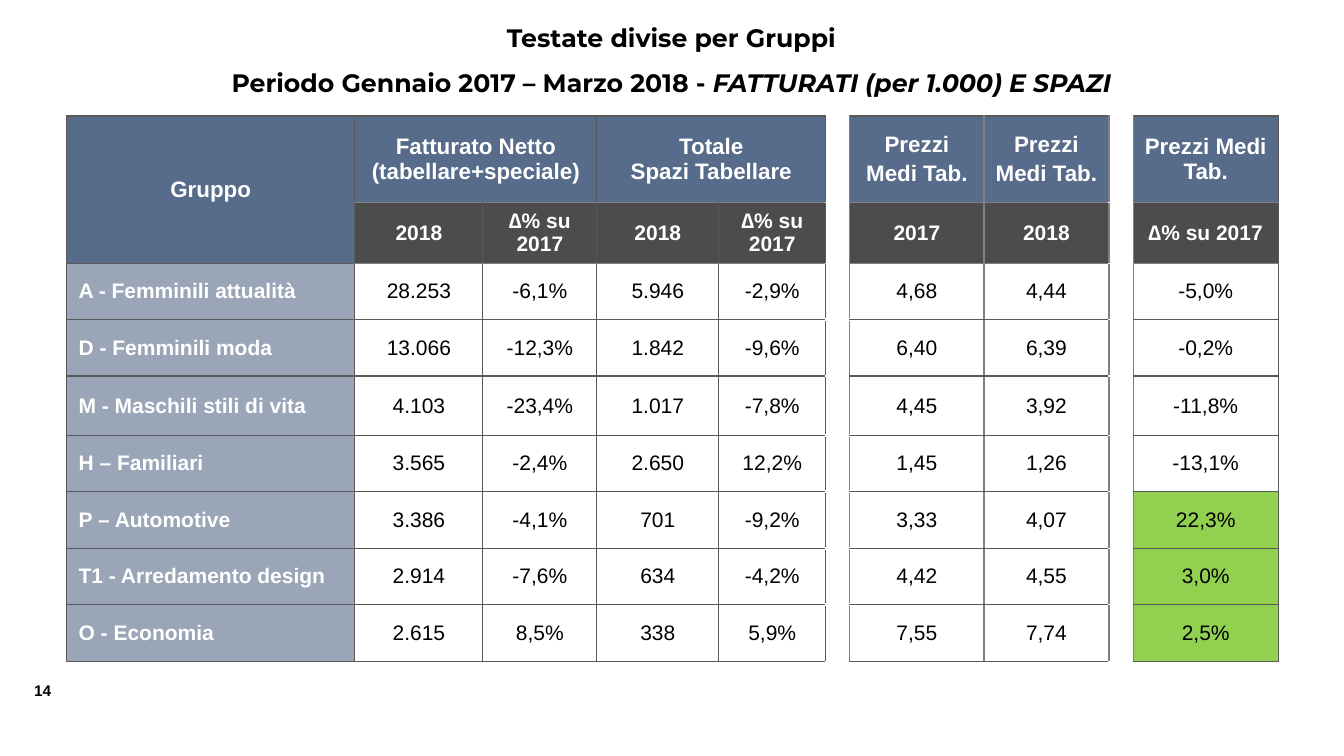
"""Build the slide of revenue, space and average prices by magazine group."""
from lxml import etree
from pptx import Presentation
from pptx.dml.color import RGBColor
from pptx.enum.text import MSO_ANCHOR, PP_ALIGN
from pptx.oxml.ns import qn
from pptx.util import Inches, Pt

LEFT, CENTER = PP_ALIGN.LEFT, PP_ALIGN.CENTER
MIDDLE = MSO_ANCHOR.MIDDLE
BLACK = RGBColor(0, 0, 0)
WHITE = RGBColor(0xFF, 0xFF, 0xFF)
BLUE = RGBColor(0x57, 0x6B, 0x8A)
GREEN = RGBColor(0x92, 0xD0, 0x50)
DARK = RGBColor(0x59, 0x59, 0x59)
GRAY = RGBColor(0x80, 0x80, 0x80)

COLS = [2.86, 1.27, 1.13, 1.21, 1.06, 0.24, 1.33, 1.24, 0.24, 1.44]
ROWS = [0.86, 0.6, 0.56, 0.56, 0.59, 0.56, 0.56, 0.56, 0.56]
GAPS = (5, 8)
MERGES = [(0, 0, 1, 0), (0, 1, 0, 2), (0, 3, 0, 4)]
PRICE = "Prezzi\nMedi Tab."
DELTA = "∆% su 2017"
DATA = [
    ["Gruppo", "Fatturato Netto (tabellare+speciale)", "",
     "Totale\nSpazi Tabellare", "", "", PRICE, PRICE, "", "Prezzi Medi Tab."],
    ["", "2018", DELTA, "2018", DELTA, "", "2017", "2018", "", DELTA],
    ["A - Femminili attualità", "28.253", "-6,1%", "5.946", "-2,9%", "",
     "4,68", "4,44", "", "-5,0%"],
    ["D - Femminili moda", "13.066", "-12,3%", "1.842", "-9,6%", "",
     "6,40", "6,39", "", "-0,2%"],
    ["M - Maschili stili di vita", "4.103", "-23,4%", "1.017", "-7,8%", "",
     "4,45", "3,92", "", "-11,8%"],
    ["H – Familiari", "3.565", "-2,4%", "2.650", "12,2%", "",
     "1,45", "1,26", "", "-13,1%"],
    ["P – Automotive", "3.386", "-4,1%", "701", "-9,2%", "",
     "3,33", "4,07", "", "22,3%"],
    ["T1 - Arredamento design", "2.914", "-7,6%", "634", "-4,2%", "",
     "4,42", "4,55", "", "3,0%"],
    ["O - Economia", "2.615", "8,5%", "338", "5,9%", "",
     "7,55", "7,74", "", "2,5%"],
]


def write(para, text, font="Arial", size=15, color=BLACK, bold=False,
          italic=False, align=LEFT):
    para.alignment = align
    run = para.add_run()
    run.text = text
    run.font.name = font
    run.font.size = Pt(size)
    run.font.color.rgb = color
    run.font.bold = bold
    run.font.italic = italic


def border(cell, side, color, width):
    line = etree.SubElement(cell._tc.get_or_add_tcPr(), qn("a:ln" + side),
                            w=str(Pt(width)))
    fill = etree.SubElement(line, qn("a:solidFill"))
    etree.SubElement(fill, qn("a:srgbClr"), val=str(color))


def paint(cell, color, alpha=100):
    if color is None:
        cell.fill.background()
        return
    cell.fill.solid()
    cell.fill.fore_color.rgb = color
    if alpha < 100:
        tint = cell._tc.tcPr.find(".//" + qn("a:solidFill") + "/" + qn("a:srgbClr"))
        tint = cell._tc.tcPr.find(qn("a:solidFill"))[0]
        etree.SubElement(tint, qn("a:alpha"), val=str(alpha * 1000))


def shade(row, col):
    if col in GAPS:
        return WHITE, 100
    if row == 0:
        return BLUE, 100
    if row == 1:
        return BLACK, 70
    if col == 0:
        return BLUE, 60
    if col == 9 and not DATA[row][col].startswith("-"):
        return GREEN, 100
    return None, 100


class Board:
    def __init__(self, deck):
        self.slide = deck.slides.add_slide(deck.slide_layouts[6])

    def box(self, left, top, width, height):
        shape = self.slide.shapes.add_textbox(
            Inches(left), Inches(top), Inches(width), Inches(height))
        shape.text_frame.word_wrap = True
        return shape.text_frame

    def title(self, lines):
        frame = self.box(1.11, 0.02, 11.1, 1.07)
        for i, runs in enumerate(lines):
            para = frame.add_paragraph() if i else frame.paragraphs[0]
            para.line_spacing = 1.5
            for text, italic in runs:
                write(para, text, font="Montserrat", size=18, bold=True,
                      italic=italic, align=CENTER)

    def number(self, text):
        frame = self.box(0.24, 6.71, 0.42, 0.29)
        write(frame.paragraphs[0], text, size=11, bold=True)

    def table(self, left, top):
        grid = self.slide.shapes.add_table(
            len(ROWS), len(COLS), Inches(left), Inches(top),
            Inches(sum(COLS)), Inches(sum(ROWS))).table
        grid.first_row = grid.horz_banding = False
        for col, width in zip(grid.columns, COLS):
            col.width = Inches(width)
        for row, height in zip(grid.rows, ROWS):
            row.height = Inches(height)
        for r, c, r2, c2 in MERGES:
            grid.cell(r, c).merge(grid.cell(r2, c2))
        for r, texts in enumerate(DATA):
            for c, text in enumerate(texts):
                cell = grid.cell(r, c)
                if not cell.is_spanned:
                    self.edges(cell, r, c)
                    paint(cell, *shade(r, c))
                    self.fill(cell, r, c, text)

    def edges(self, cell, row, col):
        for side, edge in (("L", col), ("R", col + 1)):
            border(cell, side, GRAY if 6 <= edge <= 9 else DARK, 1)
        for side, edge in (("T", row), ("B", row + 1)):
            if col in GAPS:
                thick = col == 5 and 3 <= edge <= 8
                border(cell, side, WHITE, 2.25 if thick else 1)
            else:
                gray = col > 0 and edge in (1, 2)
                border(cell, side, GRAY if gray else DARK, 1)

    def fill(self, cell, row, col, text):
        head = row < 2 and col not in GAPS
        label = row > 1 and col == 0
        cell.vertical_anchor = MIDDLE
        cell.margin_left = Inches(0.12 if label else 0.1 if head else 0)
        cell.margin_right = Inches(0.1 if head else 0)
        cell.margin_top = cell.margin_bottom = Inches(0.05 if head else 0)
        if not text:
            return
        frame = cell.text_frame
        for i, line in enumerate(text.split("\n")):
            para = frame.add_paragraph() if i else frame.paragraphs[0]
            if i and text == PRICE:
                para.space_before = Pt(3.2)
            write(para, line, size=16 if row == 0 else 15,
                  color=WHITE if head or label else BLACK,
                  bold=head or label, align=LEFT if label else CENTER)


def main():
    deck = Presentation()
    deck.slide_width, deck.slide_height = Inches(13.33), Inches(7.5)
    board = Board(deck)
    board.number("14")
    board.title([
        [("Testate divise per Gruppi", False)],
        [("Periodo Gennaio 2017 – Marzo 2018 - ", False),
         ("FATTURATI (per 1.000) E SPAZI", True)],
    ])
    board.table(0.66, 1.15)
    deck.save("out.pptx")


if __name__ == "__main__":
    main()
